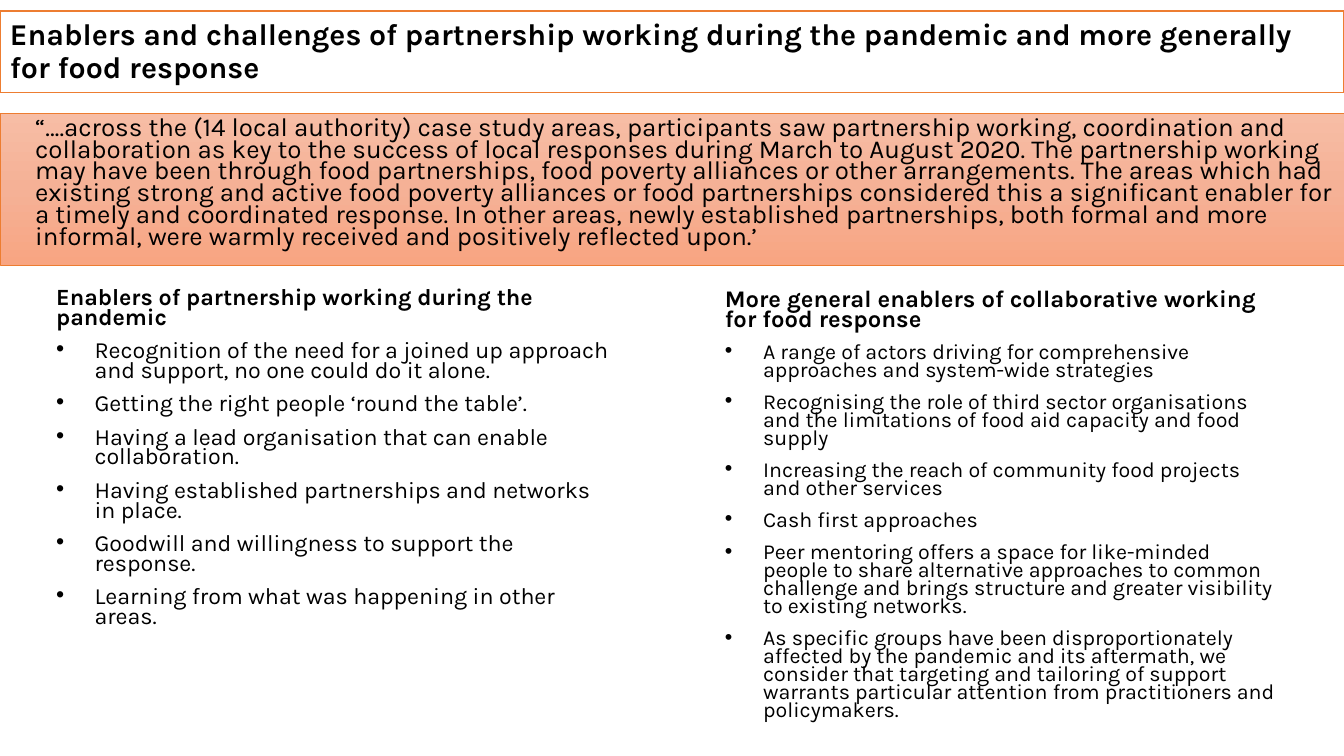
from copy import deepcopy
from dataclasses import dataclass

from lxml import etree
from pptx import Presentation
from pptx.dml.color import RGBColor
from pptx.enum.shapes import MSO_SHAPE
from pptx.enum.text import MSO_ANCHOR, PP_ALIGN
from pptx.oxml.ns import qn
from pptx.util import Inches, Pt

RECT = MSO_SHAPE.RECTANGLE
TOP, MIDDLE = MSO_ANCHOR.TOP, MSO_ANCHOR.MIDDLE
LEFT = PP_ALIGN.LEFT

BLACK = RGBColor(0x00, 0x00, 0x00)
WHITE = RGBColor(0xFF, 0xFF, 0xFF)
ORANGE = RGBColor(0xED, 0x7D, 0x31)
PEACH = (
    RGBColor(0xF7, 0xBD, 0xA5),
    RGBColor(0xF5, 0xB1, 0x96),
    RGBColor(0xF8, 0xA5, 0x82),
)
FONT = "Karla"
WIDTH = 13.33
INDENT = 0.38

TITLE = (
    "Enablers and challenges of partnership working during the pandemic "
    "and more generally for food response"
)
QUOTE = (
    "“….across the (14 local authority) case study areas, participants saw "
    "partnership working, coordination and collaboration as key to the success "
    "of local responses during March to August 2020. The partnership working "
    "may have been through food partnerships, food poverty alliances or other "
    "arrangements. The areas which had existing strong and active food poverty "
    "alliances or food partnerships considered this a significant enabler for "
    "a timely and coordinated response. In other areas, newly established "
    "partnerships, both formal and more informal, were warmly received and "
    "positively reflected upon.’"
)


@dataclass
class Band:
    text: str
    top: float
    height: float
    size: float
    line: float
    anchor: MSO_ANCHOR


@dataclass
class Column:
    left: float
    top: float
    height: float
    head: str
    head_size: float
    items: list[str]
    item_size: float


HEADING = Band(TITLE, 0.11, 0.81, 21.6, 1, MIDDLE)
PANEL = Band(QUOTE, 1.13, 1.5, 18.5, 0.5, TOP)
COLUMNS = [
    Column(
        0.46, 2.83, 4.57,
        "Enablers of partnership working during the pandemic", 16.6,
        [
            "Recognition of the need for a joined up approach and support, "
            "no one could do it alone.",
            "Getting the right people ‘round the table’.",
            "Having a lead organisation that can enable collaboration.",
            "Having established partnerships and networks in place.",
            "Goodwill and willingness to support the response.",
            "Learning from what was happening in other areas.",
        ],
        16.6,
    ),
    Column(
        7.09, 2.84, 4.43,
        "More general enablers of collaborative working for food response", 17,
        [
            "A range of actors driving for comprehensive approaches and "
            "system-wide strategies",
            "Recognising the role of third sector organisations and the "
            "limitations of food aid capacity and food supply",
            "Increasing the reach of community food projects and other services",
            "Cash first approaches",
            "Peer mentoring offers a space for like-minded people to share "
            "alternative approaches to common challenge and brings structure "
            "and greater visibility to existing networks.",
            "As specific groups have been disproportionately affected by the "
            "pandemic and its aftermath, we consider that targeting and "
            "tailoring of support warrants particular attention from "
            "practitioners and policymakers.",
        ],
        15.3,
    ),
]


def write(par, text: str, size: float, bold: bool = False,
          pitch: float = 0.7, gap: float = 10) -> None:
    par.text = text
    par.alignment = LEFT
    par.line_spacing = pitch
    par.space_before = Pt(gap)
    font = par.runs[0].font
    font.name = FONT
    font.size = Pt(size)
    font.bold = bold
    font.color.rgb = BLACK


def indent(par, left: float) -> None:
    par._p.get_or_add_pPr().set("marL", str(Inches(left)))


def bullet(par) -> None:
    indent(par, INDENT)
    props = par._p.get_or_add_pPr()
    props.set("indent", str(-Inches(INDENT)))
    etree.SubElement(props, qn("a:buFont")).set("typeface", "Arial")
    etree.SubElement(props, qn("a:buChar")).set("char", "•")


def draw_band(slide, band: Band):
    shape = slide.shapes.add_shape(
        RECT, 0, Inches(band.top), Inches(WIDTH), Inches(band.height))
    shape.shadow.inherit = False
    shape.line.color.rgb = ORANGE
    shape.line.width = Pt(band.line)
    shape.text_frame.word_wrap = True
    shape.text_frame.vertical_anchor = band.anchor
    return shape


def shade(shape) -> None:
    shape.fill.gradient()
    shape.fill.gradient_angle = 270
    first = shape._element.spPr.find(".//" + qn("a:gs"))
    first.addnext(deepcopy(first))
    stops = shape.fill.gradient_stops
    for i, (stop, color) in enumerate(zip(stops, PEACH)):
        stop.color.rgb = color
        stop.position = i / 2


def draw_column(slide, col: Column) -> None:
    box = slide.shapes.add_textbox(
        Inches(col.left), Inches(col.top), Inches(5.67), Inches(col.height))
    frame = box.text_frame
    frame.word_wrap = True
    write(frame.paragraphs[0], col.head, col.head_size, True)
    for item in col.items:
        par = frame.add_paragraph()
        write(par, item, col.item_size)
        bullet(par)


def main() -> None:
    deck = Presentation()
    deck.slide_width = Inches(WIDTH)
    deck.slide_height = Inches(7.5)
    slide = deck.slides.add_slide(deck.slide_layouts[6])

    title = draw_band(slide, HEADING)
    title.fill.solid()
    title.fill.fore_color.rgb = WHITE
    write(title.text_frame.paragraphs[0], HEADING.text, HEADING.size,
          True, 0.9, 0)

    panel = draw_band(slide, PANEL)
    shade(panel)
    quote = panel.text_frame.paragraphs[0]
    write(quote, PANEL.text, PANEL.size)
    indent(quote, 0.25)

    for col in COLUMNS:
        draw_column(slide, col)
    deck.save("out.pptx")


if __name__ == "__main__":
    main()
